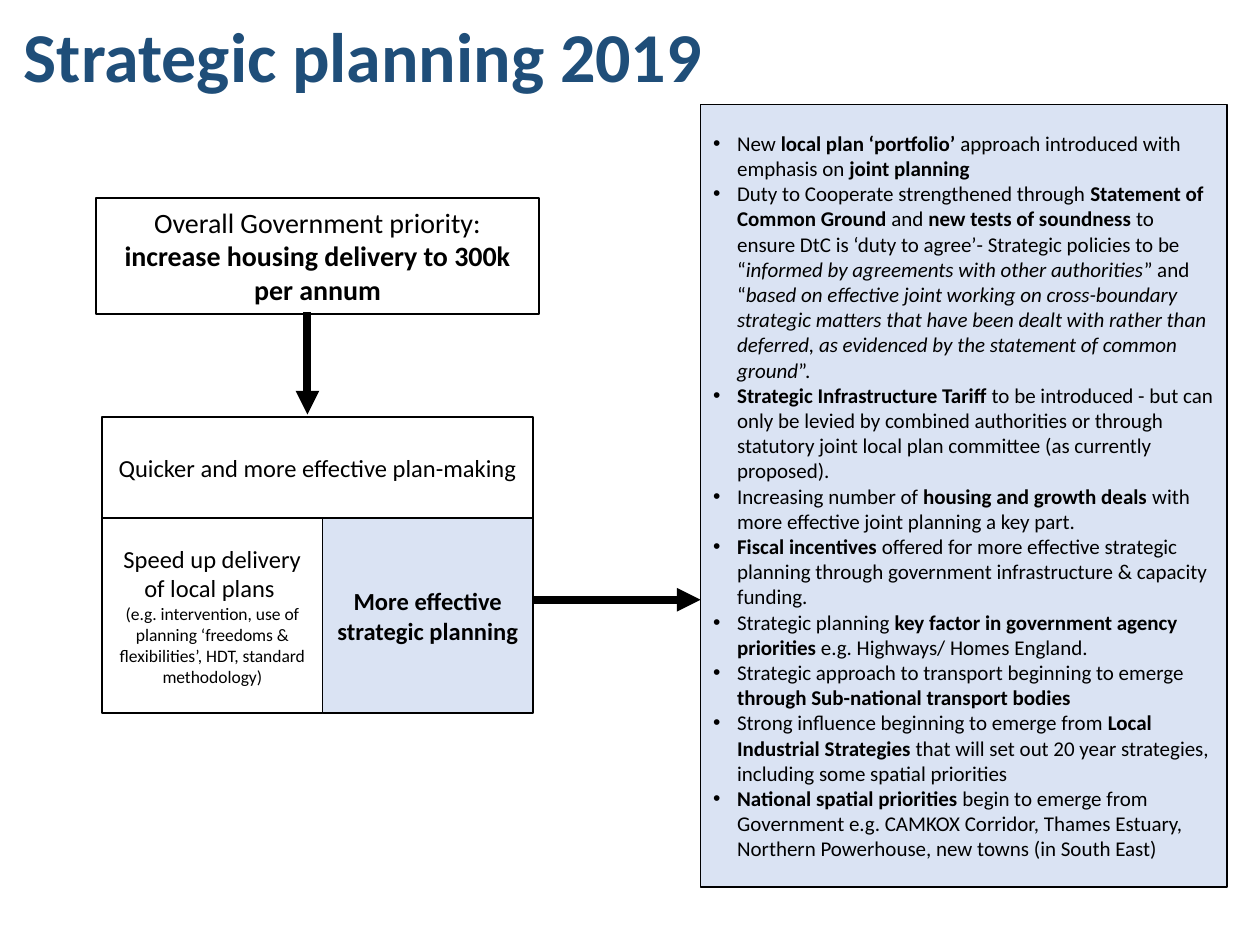
from lxml import etree
from pptx import Presentation
from pptx.dml.color import RGBColor
from pptx.enum.shapes import MSO_CONNECTOR, MSO_SHAPE
from pptx.enum.text import MSO_ANCHOR, MSO_AUTO_SIZE, PP_ALIGN
from pptx.oxml.ns import qn
from pptx.util import Inches, Pt


def color(target, value):
    if hasattr(target, "solid"):
        target.solid()
        target = target.fore_color
    target.rgb = RGBColor.from_string(value)


def add_runs(p, runs, size, value="000000"):
    for text, style in runs:
        r = p.add_run()
        r.text = text
        r.font.name = "Calibri"
        r.font.size = Pt(size)
        r.font.bold = style == "b"
        r.font.italic = style == "i"
        color(r.font.color, value)


BLACK, PALE, WHITE, NAVY = "000000", "DAE3F3", "FFFFFF", "1F4E79"

prs = Presentation()
prs.slide_width, prs.slide_height = Inches(10), Inches(7.5)
s = prs.slides.add_slide(prs.slide_layouts[1])
color(s.background.fill, WHITE)

title = s.shapes.title
title.left, title.top = Inches(0.09), Inches(0.05)
title.width, title.height = Inches(9.82), Inches(0.77)
tf = title.text_frame
tf.auto_size = MSO_AUTO_SIZE.NONE
tf.vertical_anchor = MSO_ANCHOR.TOP
p = tf.paragraphs[0]
p.alignment = PP_ALIGN.LEFT
add_runs(p, [("Strategic planning 2019", "b")], 40, NAVY)

boxes = [
    (0.76, 1.57, 3.52, 0.92, None, [
        (16, [("Overall Government priority: ", ""),
              ("increase housing delivery to 300k per annum", "b")])]),
    (0.81, 3.31, 3.42, 0.8, None, [
        (14, [("Quicker and more effective plan-making", "")])]),
    (0.81, 4.11, 1.75, 1.55, None, [
        (14, [("Speed up delivery of local plans ", "")]),
        (10, [("(e.g. intervention, use of planning ‘freedoms & flexibilities’, "
               "HDT, standard methodology)", "")])]),
    (2.56, 4.11, 1.67, 1.55, PALE, [
        (14, [("More effective strategic planning", "b")])]),
]
for x, y, w, h, fill, paragraphs in boxes:
    sp = s.shapes.add_shape(MSO_SHAPE.RECTANGLE, Inches(x), Inches(y), Inches(w), Inches(h))
    sp.shadow.inherit = False
    if fill:
        color(sp.fill, fill)
    else:
        sp.fill.background()
    color(sp.line.fill, BLACK)
    sp.line.width = Pt(1)
    tf = sp.text_frame
    tf.word_wrap = True
    tf.vertical_anchor = MSO_ANCHOR.MIDDLE
    for i, (size, runs) in enumerate(paragraphs):
        p = tf.add_paragraph() if i else tf.paragraphs[0]
        p.alignment = PP_ALIGN.CENTER
        add_runs(p, runs, size)

points = [
    [("New ", ""), ("local plan ‘portfolio’ ", "b"),
     ("approach introduced with emphasis on ", ""), ("joint planning", "b")],
    [("Duty to Cooperate strengthened through ", ""), ("Statement of Common Ground ", "b"),
     ("and ", ""), ("new tests of soundness ", "b"),
     ("to ensure DtC is ‘duty to agree’- Strategic policies to be “", ""),
     ("informed by agreements with other authorities", "i"), ("” and “", ""),
     ("based on effective joint working on cross-boundary strategic matters that have been "
      "dealt with rather than deferred, as evidenced by the statement of common ground", "i"),
     ("”.", "")],
    [("Strategic Infrastructure Tariff ", "b"),
     ("to be introduced - but can only be levied by combined authorities or through "
      "statutory joint local plan committee (as currently proposed).", "")],
    [("Increasing number of ", ""), ("housing and growth deals ", "b"),
     ("with more effective joint planning a key part.", "")],
    [("Fiscal incentives ", "b"),
     ("offered for more effective strategic planning through government infrastructure "
      "& capacity funding.", "")],
    [("Strategic planning ", ""), ("key factor in government agency priorities ", "b"),
     ("e.g. Highways/ Homes England.", "")],
    [("Strategic approach to transport beginning to emerge ", ""),
     ("through Sub-national transport bodies", "b")],
    [("Strong influence beginning to emerge from ", ""), ("Local Industrial Strategies ", "b"),
     ("that will set out 20 year strategies, including some spatial priorities", "")],
    [("National spatial priorities ", "b"),
     ("begin to emerge from Government e.g. CAMKOX Corridor, Thames Estuary, "
      "Northern Powerhouse, new towns (in South East)", "")],
]
body = s.placeholders[1]
body.left, body.top = Inches(5.56), Inches(0.83)
body.width, body.height = Inches(4.18), Inches(6.21)
color(body.fill, PALE)
color(body.line.fill, BLACK)
body.line.width = Pt(1)
tf = body.text_frame
tf.auto_size = MSO_AUTO_SIZE.NONE
tf.word_wrap = True
tf.vertical_anchor = MSO_ANCHOR.MIDDLE
for i, runs in enumerate(points):
    p = tf.add_paragraph() if i else tf.paragraphs[0]
    pPr = p._p.get_or_add_pPr()
    pPr.set("marL", str(Inches(0.19)))
    pPr.set("indent", str(Inches(-0.19)))
    etree.SubElement(pPr, qn("a:buFont")).set("typeface", "Arial")
    etree.SubElement(pPr, qn("a:buChar")).set("char", "•")
    p.space_before = Pt(0)
    add_runs(p, runs, 12)

for x1, y1, x2, y2 in [(4.23, 4.76, 5.56, 4.76), (2.44, 2.48, 2.44, 3.29)]:
    arrow = s.shapes.add_connector(
        MSO_CONNECTOR.STRAIGHT, Inches(x1), Inches(y1), Inches(x2), Inches(y2))
    color(arrow.line.fill, BLACK)
    arrow.line.width = Pt(4.5)
    etree.SubElement(arrow.line._get_or_add_ln(), qn("a:tailEnd")).set("type", "triangle")
    etree.SubElement(arrow._element.spPr, qn("a:effectLst"))

prs.save("out.pptx")
